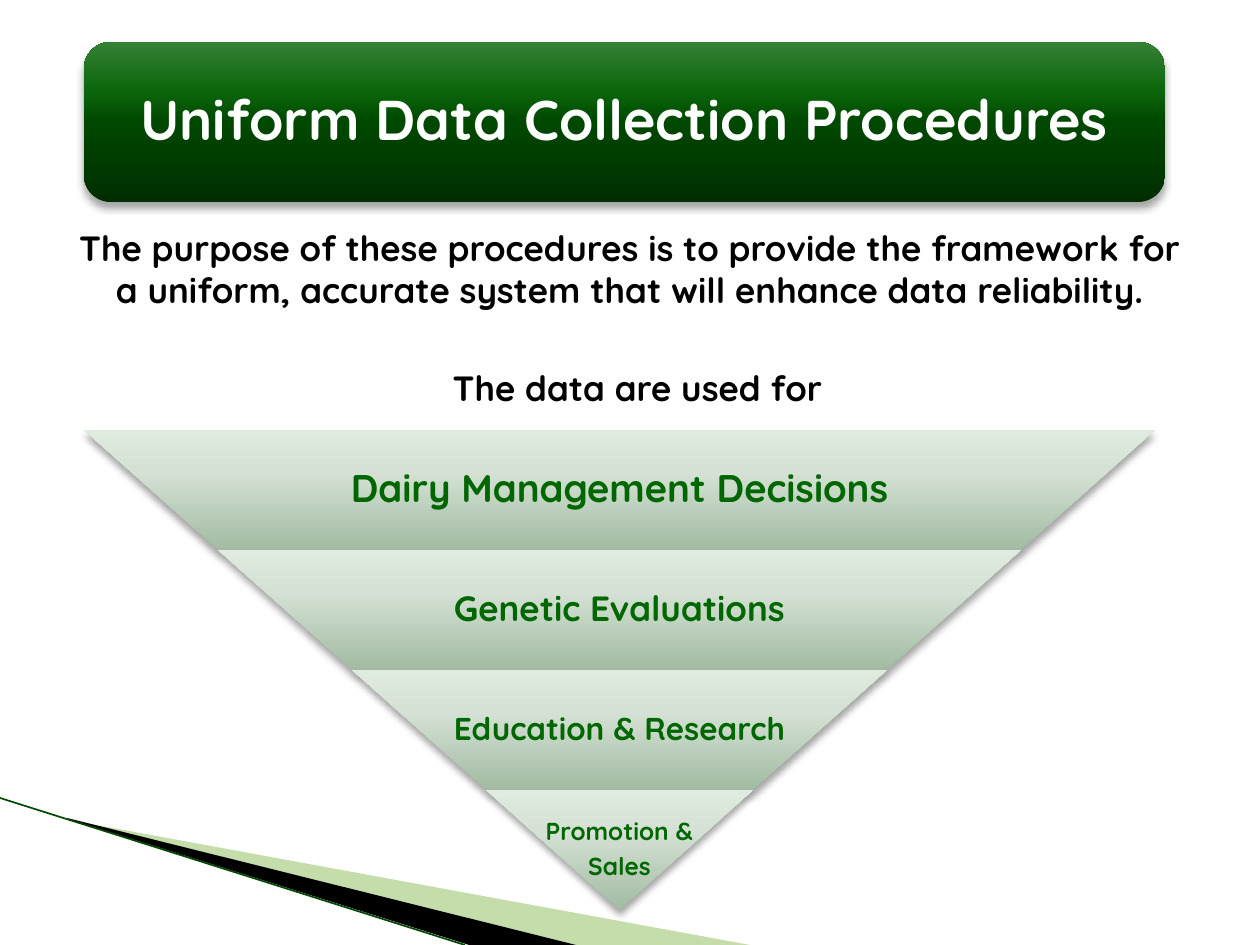
from dataclasses import dataclass

from lxml import etree
from pptx import Presentation
from pptx import util as u
from pptx.dml.color import RGBColor
from pptx.enum import shapes, text
from pptx.oxml import parse_xml
from pptx.oxml.ns import nsdecls, qn

EMU_PER_PX = 914400 / 126


@dataclass(frozen=True)
class Theme:
    """Colours, font and type sizes of the slide."""
    font: str = "Quicksand"
    white: str = "FFFFFF"
    black: str = "000000"
    label: str = "006600"
    swoosh: str = "6EAA2E"
    edge: str = "004800"
    banner: tuple = ((0, "002D00"), (50, "004800"), (70, "0C670C"), (100, "358135"))
    band: tuple = ((0, "A2BBA2"), (65, "D4E1D4"), (100, "E0EBE0"))
    title_size: int = 32
    body_size: int = 20


THEME = Theme()
LEVELS = (
    (("Dairy Management Decisions",), 22, 697),
    (("Genetic Evaluations",), 20, 522),
    (("Education & Research",), 18, 348),
    (("Promotion &", "Sales"), 14, 267),
)


def px(length):
    """Turn pixels into EMU."""
    return u.Emu(round(length * EMU_PER_PX))


def place(shape, left, top, width, height):
    """Move and size a shape in pixels."""
    shape.left, shape.top, shape.width, shape.height = map(px, (left, top, width, height))


def style(paragraph, size, colour):
    """Centre a paragraph and set its bold font."""
    paragraph.alignment = text.PP_ALIGN.CENTER
    font = paragraph.font
    font.name, font.size, font.bold = THEME.font, u.Pt(size), True
    font.color.rgb = RGBColor.from_string(colour)


def write_label(shape, lines, size, colour, inset):
    """Fill a shape with tight, vertically centred lines."""
    frame = shape.text_frame
    frame.word_wrap = True
    frame.auto_size = text.MSO_AUTO_SIZE.NONE
    frame.vertical_anchor = text.MSO_ANCHOR.MIDDLE
    frame.margin_left = frame.margin_right = frame.margin_top = frame.margin_bottom = px(inset)
    frame.text = "\n".join(lines)
    for paragraph in frame.paragraphs:
        paragraph.line_spacing = 0.9
        paragraph.space_before = u.Pt(0)
        style(paragraph, size, colour)
    for paragraph in frame.paragraphs[:-1]:
        paragraph.space_after = u.Pt(round(size * 0.35, 1))


def add_glossy_shape(slide, kind, box, stops):
    """Add a preset shape with an upward gradient and a soft shadow."""
    shape = slide.shapes.add_shape(kind, *map(px, box))
    shape.line.fill.background()
    stop_xml = "".join(
        f'<a:gs pos="{position * 1000}"><a:srgbClr val="{colour}"/></a:gs>'
        for position, colour in stops)
    gradient = parse_xml(
        f'<a:gradFill {nsdecls("a")} rotWithShape="0"><a:gsLst>{stop_xml}</a:gsLst>'
        '<a:lin ang="16200000" scaled="0"/></a:gradFill>')
    shadow = parse_xml(
        f'<a:effectLst {nsdecls("a")}><a:outerShdw blurRad="{u.Pt(4)}" dist="{u.Pt(3)}" '
        'dir="5400000" rotWithShape="0"><a:srgbClr val="000000"><a:alpha val="35000"/>'
        '</a:srgbClr></a:outerShdw></a:effectLst>')
    properties = shape._element.spPr
    properties.find(qn("a:prstGeom")).addnext(gradient)
    properties.append(shadow)
    return shape


def add_swoosh(slide, points, colour, opacity=100):
    """Add a plain filled outline."""
    builder = slide.shapes.build_freeform(*points[0], scale=EMU_PER_PX)
    builder.add_line_segments(points[1:], close=True)
    shape = builder.convert_to_shape()
    shape.shadow.inherit = False
    shape.line.fill.background()
    shape.fill.solid()
    shape.fill.fore_color.rgb = RGBColor.from_string(colour)
    if opacity < 100:
        tint = shape._element.spPr.find(qn("a:solidFill"))[0]
        etree.SubElement(tint, qn("a:alpha")).set("val", str(opacity * 1000))


def add_edge(slide, start, end):
    """Add the thin line along the swooshes."""
    line = slide.shapes.add_connector(
        shapes.MSO_CONNECTOR.STRAIGHT, *map(px, (*start, *end)))
    line.line.color.rgb = RGBColor.from_string(THEME.edge)
    line.line.width = u.Pt(0.95)
    etree.SubElement(line._element.spPr, qn("a:effectLst"))


def bring_to_front(slide, shape):
    """Move a shape to the top of the drawing order."""
    slide.shapes._spTree.append(shape._element)


def fill_body(slide, body):
    """Write the purpose statement and the lead-in to the pyramid."""
    bring_to_front(slide, body)
    place(body, 63, 220, 1134, 607)
    frame = body.text_frame
    frame.auto_size = text.MSO_AUTO_SIZE.NONE
    frame.text = (
        "The purpose of these procedures is to provide the framework for "
        "a uniform, accurate system that will enhance data reliability.\n"
        "The data are used for")
    for paragraph, margin, gap in zip(frame.paragraphs, (0, 50), (0, 32)):
        properties = paragraph._p.get_or_add_pPr()
        properties.set("marL", str(px(margin)))
        properties.set("indent", str(px(-35)))
        etree.SubElement(properties, qn("a:buNone"))
        paragraph.line_spacing = 1.0
        paragraph.space_before = u.Pt(gap)
        style(paragraph, THEME.body_size, THEME.black)


def add_banner(slide, title):
    """Add the rounded banner with the title on it."""
    add_glossy_shape(slide, shapes.MSO_SHAPE.ROUNDED_RECTANGLE, (84, 42, 1081, 160), THEME.banner)
    bring_to_front(slide, title)
    place(title, 103, 50, 1043, 145)
    write_label(title, ("Uniform Data Collection Procedures",),
                THEME.title_size, THEME.white, 11)


def add_pyramid(slide):
    """Stack the inverted pyramid, each level narrower by one step."""
    left, top, width, height, step = 84, 430, 1071, 120, 134
    for index, (lines, size, label_width) in enumerate(LEVELS):
        level_top = top + index * height
        level_box = (left + index * step, level_top, width - 2 * index * step, height)
        band = add_glossy_shape(slide, shapes.MSO_SHAPE.TRAPEZOID, level_box, THEME.band)
        band.adjustments[0] = round(step / height, 2)
        band.rotation = 180
        label_left = left + (width - label_width) / 2
        label = slide.shapes.add_textbox(
            *map(px, (label_left, level_top, label_width, height)))
        write_label(label, lines, size, THEME.label, 4)


def main():
    """Build and save the slide."""
    presentation = Presentation()
    presentation.slide_width, presentation.slide_height = px(1260), px(945)
    slide = presentation.slides.add_slide(presentation.slide_layouts[1])
    title, body = slide.placeholders
    add_swoosh(slide, ((69, 820), (750, 945), (575, 945), (69, 819)), THEME.swoosh, 40)
    add_swoosh(slide, ((67, 818), (576, 945), (469, 945), (68, 819)), THEME.black)
    add_edge(slide, (0, 798), (465, 945))
    fill_body(slide, body)
    add_banner(slide, title)
    add_pyramid(slide)
    presentation.save("out.pptx")


if __name__ == "__main__":
    main()
